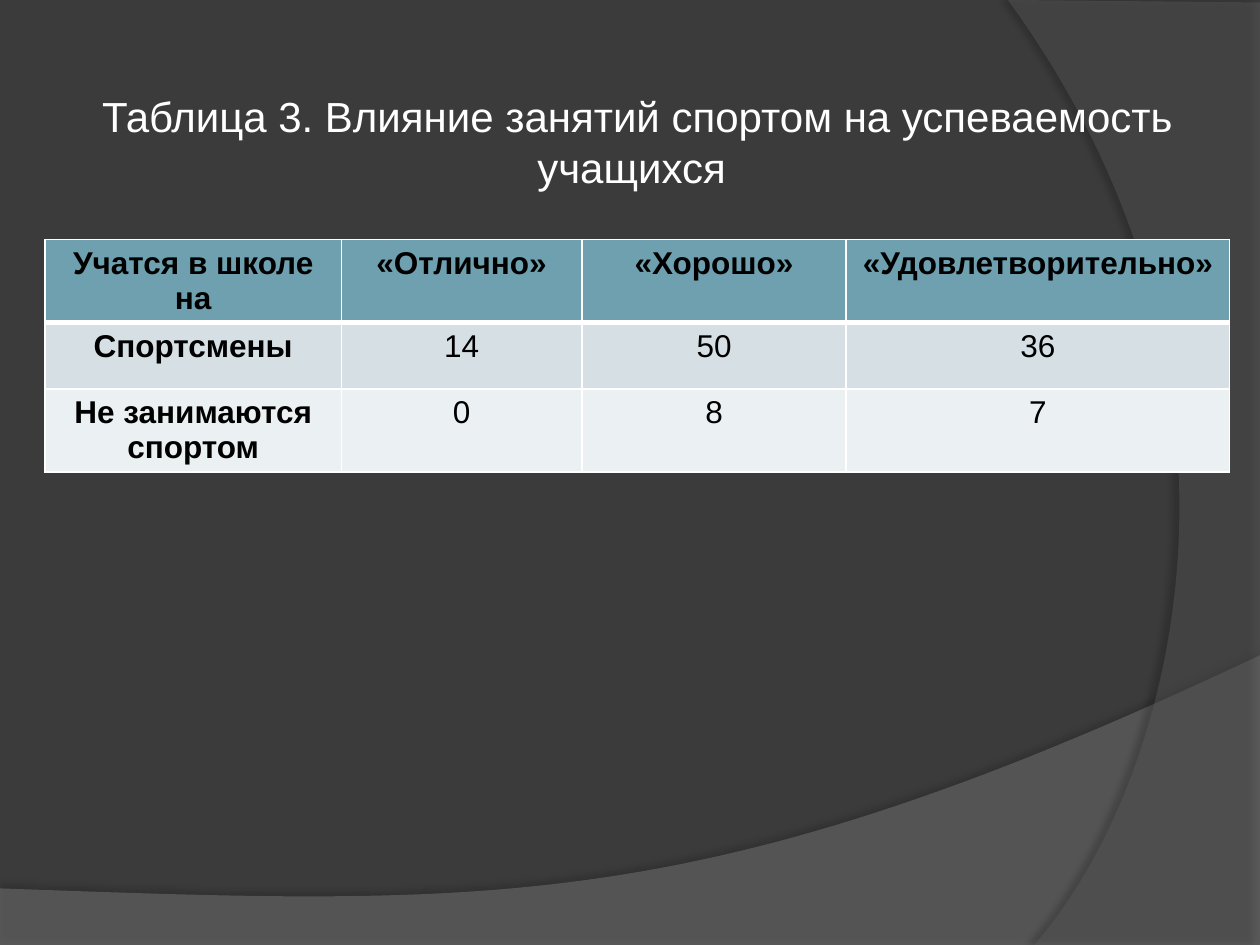
from lxml.etree import SubElement
from pptx import Presentation
from pptx.dml.color import RGBColor
from pptx.enum.text import MSO_ANCHOR, MSO_AUTO_SIZE, PP_ALIGN
from pptx.oxml import parse_xml
from pptx.oxml.ns import nsdecls, qn
from pptx.util import Cm, Pt

LEFT, WIDTH = Cm(0.91), Cm(23.88)
TITLE = "Таблица 3. Влияние занятий спортом на успеваемость учащихся "
ROWS = [
    ["Учатся в школе на", "«Отлично»", "«Хорошо»", "«Удовлетворительно»"],
    ["Спортсмены", "14", "50", "36"],
    ["Не занимаются спортом", "0", "8", "7"],
]
ROW_FILLS = ["6EA0B0", "D5DFE4", "EBF0F2"]
ROW_HEIGHTS = [1.66, 1.33, 1.66]
COLUMN_WIDTHS = [5.97, 4.85, 5.33, 7.73]


def color(value):
    return RGBColor.from_string(value)


def paint(fill, value):
    fill.solid()
    fill.fore_color.rgb = color(value)


def format_paragraph(paragraph, size, value, bold=False):
    paragraph.alignment = PP_ALIGN.CENTER
    font_format = {"name": "Arial", "size": Pt(size), "bold": bold}
    for name, setting in font_format.items():
        setattr(paragraph.font, name, setting)
    paragraph.font.color.rgb = color(value)


def curve(start, first, second, end, steps=60):
    """Points along a cubic Bezier curve."""
    points = []
    for step in range(steps + 1):
        t = step / steps
        weights = ((1 - t) ** 3, 3 * t * (1 - t) ** 2, 3 * t * t * (1 - t), t ** 3)
        points.append(tuple(
            sum(weight * value for weight, value in zip(weights, values))
            for values in zip(start, first, second, end)))
    return points


def add_backdrop(slide, points, value, opacity, shadow):
    """Translucent outline with a soft shadow."""
    vertices = [(Cm(x), Cm(y)) for x, y in points]
    builder = slide.shapes.build_freeform(*vertices[0])
    builder.add_line_segments(vertices[1:], close=True)
    shape = builder.convert_to_shape()
    paint(shape.fill, value)
    shape.line.fill.background()
    fill_color = shape.fill._xPr.find(qn("a:solidFill"))[0]
    SubElement(fill_color, qn("a:alpha"), val=str(opacity * 1000))
    alpha, blur, distance, angle = shadow
    shape.element.spPr.append(parse_xml(
        f'<a:effectLst {nsdecls("a")}><a:outerShdw blurRad="{Pt(blur)}" '
        f'dist="{Pt(distance)}" dir="{angle * 60000}" algn="ctr" rotWithShape="0">'
        f'<a:srgbClr val="000000"><a:alpha val="{alpha * 1000}"/></a:srgbClr>'
        '</a:outerShdw></a:effectLst>'))


def set_borders(cell, widths):
    properties = cell._tc.get_or_add_tcPr()
    for index, (side, width) in enumerate(widths.items()):
        properties.insert(index, parse_xml(
            f'<a:ln{side} {nsdecls("a")} w="{Pt(width)}"><a:solidFill>'
            f'<a:srgbClr val="FFFFFF"/></a:solidFill></a:ln{side}>'))


def add_results_table(slide):
    table = slide.shapes.add_table(
        len(ROWS), len(COLUMN_WIDTHS), LEFT, Cm(4.83), WIDTH,
        Cm(sum(ROW_HEIGHTS))).table
    for column, width in zip(table.columns, COLUMN_WIDTHS):
        column.width = Cm(width)
    for row_index, texts in enumerate(ROWS):
        table.rows[row_index].height = Cm(ROW_HEIGHTS[row_index])
        # The rule below the header is thick
        borders = {"L": 1, "R": 1, "T": 3 if row_index == 1 else 1,
                   "B": 3 if row_index == 0 else 1}
        for column_index, text in enumerate(texts):
            cell = table.cell(row_index, column_index)
            cell.text = text
            format_paragraph(cell.text_frame.paragraphs[0], 18, "000000",
                             bold=row_index == 0 or column_index == 0)
            set_borders(cell, borders)
            paint(cell.fill, ROW_FILLS[row_index])


def place_title(slide):
    title = slide.shapes.title
    position = {"left": LEFT, "top": Cm(1.7), "width": WIDTH, "height": Cm(2.29)}
    for name, length in position.items():
        setattr(title, name, length)
    frame = title.text_frame
    frame.text = TITLE
    frame.word_wrap = True
    frame.auto_size = MSO_AUTO_SIZE.SHAPE_TO_FIT_TEXT
    frame.vertical_anchor = MSO_ANCHOR.TOP
    format_paragraph(frame.paragraphs[0], 24, "FFFFFF")
    # Bring the title in front of the backdrop
    slide.shapes._spTree.append(title.element)


def main():
    presentation = Presentation()
    presentation.slide_width, presentation.slide_height = Cm(25.4), Cm(19.05)
    slide = presentation.slides.add_slide(presentation.slide_layouts[5])
    paint(slide.background.fill, "3B3B3B")

    # Backdrop: wave along the bottom, arc on the right
    wave = curve((25.4, 13.21), (14.2, 18.52), (9.93, 18.26), (0, 17.91))
    add_backdrop(slide, [(0, 19.08), (25.4, 19.08)] + wave,
                 "7F7F7F", 45, (35, 4, 3.5, 270))
    arc = curve((20.85, 19.05), (23.75, 15.72), (25.86, 7.62), (20.32, 0))
    add_backdrop(slide, [(25.4, 0.05), (25.4, 19.05)] + arc,
                 "5E5E5E", 40, (45, 4, 4, 180))

    add_results_table(slide)
    place_title(slide)
    presentation.save("out.pptx")


if __name__ == "__main__":
    main()
